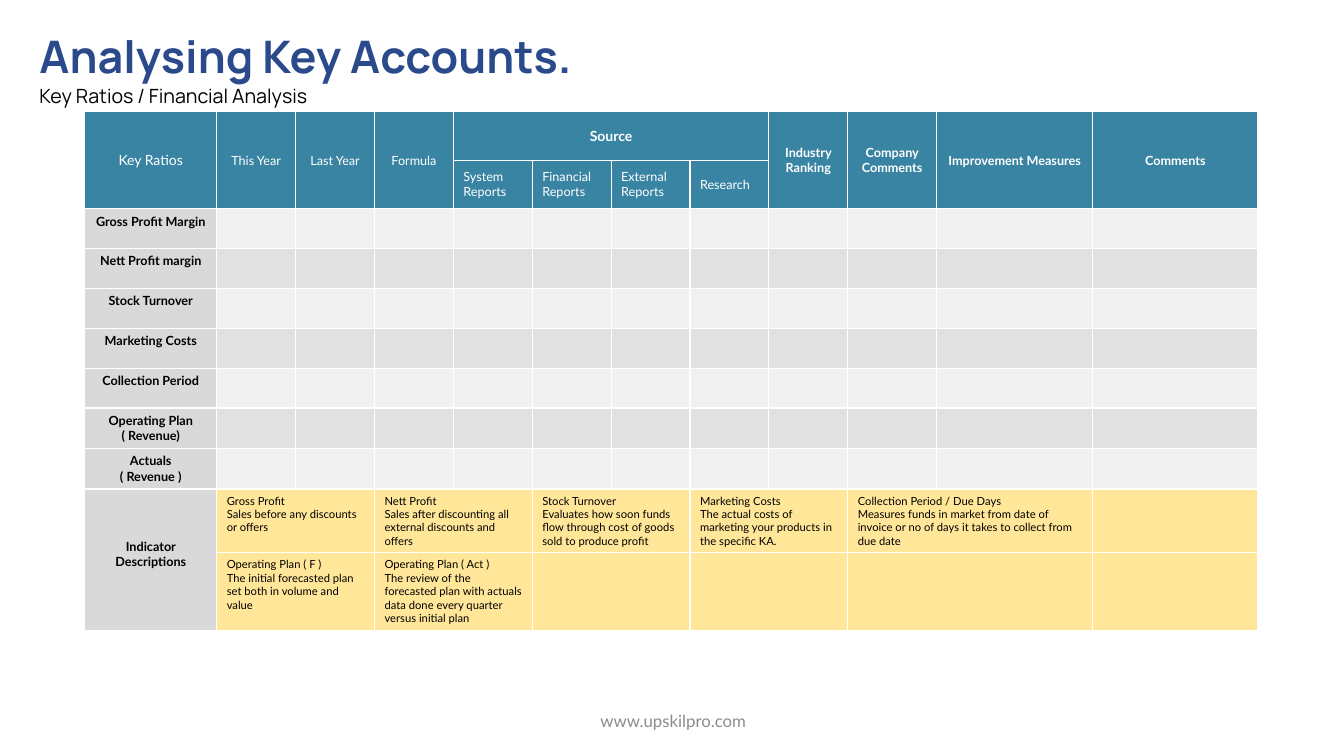
from lxml.etree import SubElement
from pptx import Presentation
from pptx.dml.color import RGBColor
from pptx.enum.text import MSO_ANCHOR, PP_ALIGN
from pptx.oxml import parse_xml
from pptx.oxml.ns import nsdecls, qn
from pptx.util import Inches, Pt

WIDE, HIGH = 13.33, 7.5
TEAL, GREY, SAND = "3984A3", "D9D9D9", "FFE699"
BANDS = "F0F0F0", "E1E1E1"
WHITE, BLACK = "FFFFFF", "000000"
MID, LEFT = PP_ALIGN.CENTER, PP_ALIGN.LEFT

# Grid of the table, in inches
COLS = [1.31] + [6.26 / 8] * 8 + [0.88, 1.55, 1.64]
ROWS = [0.48] * 2 + [2.77 / 7] * 7 + [0.63, 0.77]

# Heads: text, column, size, bold, rows, columns
HEADS = [
    ("Key Ratios", 0, 10, False, 2, 1),
    ("This Year", 1, 9, False, 2, 1),
    ("Last Year", 2, 9, False, 2, 1),
    ("Formula", 3, 9, False, 2, 1),
    ("Source", 4, 10, True, 1, 4),
    ("Industry Ranking", 8, 9, True, 2, 1),
    ("Company Comments", 9, 9, True, 2, 1),
    ("Improvement Measures", 10, 9, True, 2, 1),
    ("Comments", 11, 9, True, 2, 1),
]
SOURCES = ["System Reports", "Financial Reports", "External Reports", "Research"]
RATIOS = [
    ["Gross Profit Margin"],
    ["Nett Profit margin"],
    ["Stock Turnover"],
    ["Marketing Costs"],
    ["Collection Period"],
    ["Operating Plan", "( Revenue)"],
    ["Actuals", "( Revenue )"],
]
NOTES = [
    [
        ["Gross Profit", "Sales before any discounts or offers"],
        ["Nett Profit", "Sales after discounting all external discounts and offers"],
        ["Stock Turnover", "Evaluates how soon funds flow through cost of goods "
         "sold to produce profit"],
        ["Marketing Costs", "The actual costs of marketing your products in the "
         "specific KA."],
        ["Collection Period / Due Days", "Measures funds in market from date of "
         "invoice or no of days it takes to collect from due date"],
    ],
    [
        ["Operating Plan ( F )", "The initial forecasted plan set both in volume "
         "and value"],
        ["Operating Plan ( Act )", "The review of the forecasted plan with actuals "
         "data done every quarter versus initial plan"],
        [], [], [],
    ],
]


def tint(code):
    return RGBColor.from_string(code)


def add_run(para, text, size, color, bold=False, face="Lato"):
    run = para.add_run()
    run.text = text
    font = run.font
    font.name, font.size, font.bold = face, Pt(size), bold
    font.color.rgb = tint(color)


def add_box(slide, left, top, width, height):
    """Add a text box placed by shares of the slide."""
    box = slide.shapes.add_textbox(
        Inches(left * WIDE), Inches(top * HIGH),
        Inches(width * WIDE), Inches(height * HIGH))
    box.text_frame.word_wrap = True
    return box.text_frame


def edge(cell):
    """Give a cell white lines on all sides."""
    props = cell._tc.get_or_add_tcPr()
    for spot, side in enumerate("LRTB"):
        props.insert(spot, parse_xml(
            f'<a:ln{side} {nsdecls("a")} w="12700"><a:solidFill>'
            f'<a:srgbClr val="{WHITE}"/></a:solidFill></a:ln{side}>'))


def paint(cell, color):
    cell.fill.solid()
    cell.fill.fore_color.rgb = tint(color)
    edge(cell)
    # Small type keeps blank rows low
    SubElement(cell.text_frame.paragraphs[0]._p, qn("a:endParaRPr"), sz="900")


def fill_in(cell, lines, size, color, bold=False, align=MID, anchor=MSO_ANCHOR.TOP):
    cell.vertical_anchor = anchor
    frame = cell.text_frame
    for spot, line in enumerate(lines):
        para = frame.add_paragraph() if spot else frame.paragraphs[0]
        para.alignment = align
        add_run(para, line, size, color, bold)


def shade(row, col):
    if row < 2:
        return TEAL
    if col == 0:
        return GREY
    return SAND if row > 8 else BANDS[row % 2]


def add_grid(slide):
    shape = slide.shapes.add_table(
        len(ROWS), len(COLS), Inches(0.063 * WIDE), Inches(0.148 * HIGH),
        Inches(sum(COLS)), Inches(sum(ROWS)))
    grid = shape.table
    for col, width in zip(grid.columns, COLS):
        col.width = Inches(width)
    for row, height in zip(grid.rows, ROWS):
        row.height = Inches(height)
    for row in range(len(ROWS)):
        for col in range(len(COLS)):
            paint(grid.cell(row, col), shade(row, col))
    return grid


def add_heads(grid):
    for text, col, size, bold, down, over in HEADS:
        cell = grid.cell(0, col)
        cell.merge(grid.cell(down - 1, col + over - 1))
        fill_in(cell, [text], size, WHITE, bold, anchor=MSO_ANCHOR.MIDDLE)
    for col, text in enumerate(SOURCES, 4):
        fill_in(grid.cell(1, col), [text], 9, WHITE, align=LEFT,
                anchor=MSO_ANCHOR.MIDDLE)


def add_notes(grid):
    label = grid.cell(9, 0)
    label.merge(grid.cell(10, 0))
    label.margin_top = Inches(0.5)
    fill_in(label, ["Indicator Descriptions"], 9, BLACK, True)
    for row, notes in enumerate(NOTES, 9):
        for pair, lines in enumerate(notes):
            col = 1 + 2 * pair
            cell = grid.cell(row, col)
            cell.merge(grid.cell(row, col + 1))
            fill_in(cell, lines, 8, BLACK, align=LEFT)


def main():
    deck = Presentation()
    deck.slide_width, deck.slide_height = Inches(WIDE), Inches(HIGH)
    slide = deck.slides.add_slide(deck.slide_layouts[6])

    # Footer
    foot = add_box(slide, 0.332, 0.927, 0.338, 0.053)
    foot.vertical_anchor = MSO_ANCHOR.MIDDLE
    foot.paragraphs[0].alignment = MID
    add_run(foot.paragraphs[0], "www.upskilpro.com", 12, "8C8C8C")

    # Title and subtitle
    head = add_box(slide, 0.022, 0.031, 0.526, 0.117)
    add_run(head.paragraphs[0], "Analysing Key Accounts.", 32, "2A4A8B", True, "Manrope")
    sub = head.add_paragraph()
    sub.line_spacing, sub.space_after = 1.07, Pt(8)
    add_run(sub, "Key Ratios / Financial Analysis", 14, BLACK, face="Manrope")

    # Table
    grid = add_grid(slide)
    add_heads(grid)
    for row, lines in enumerate(RATIOS, 2):
        fill_in(grid.cell(row, 0), lines, 9, BLACK, True)
    add_notes(grid)

    deck.save("out.pptx")


if __name__ == "__main__":
    main()
